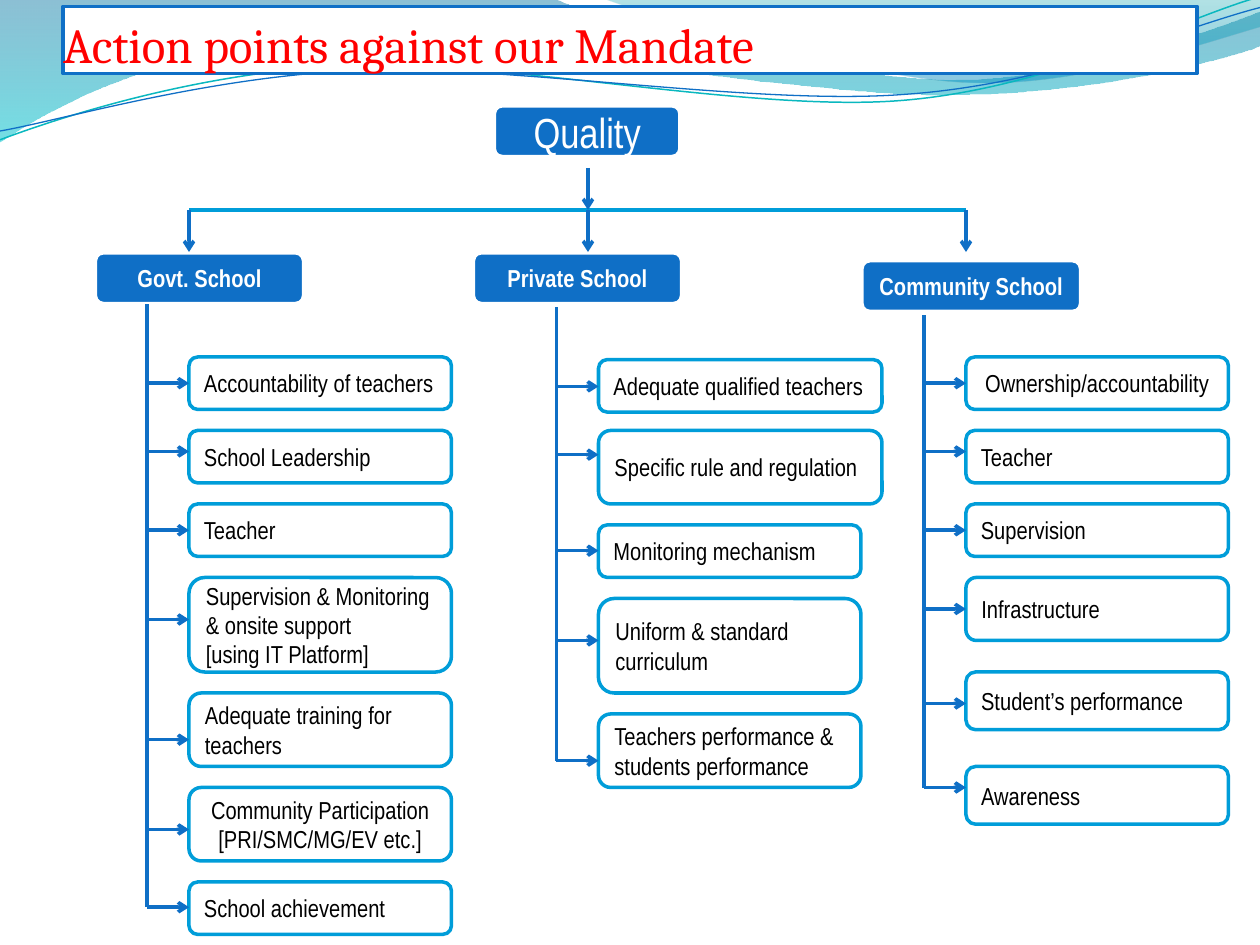
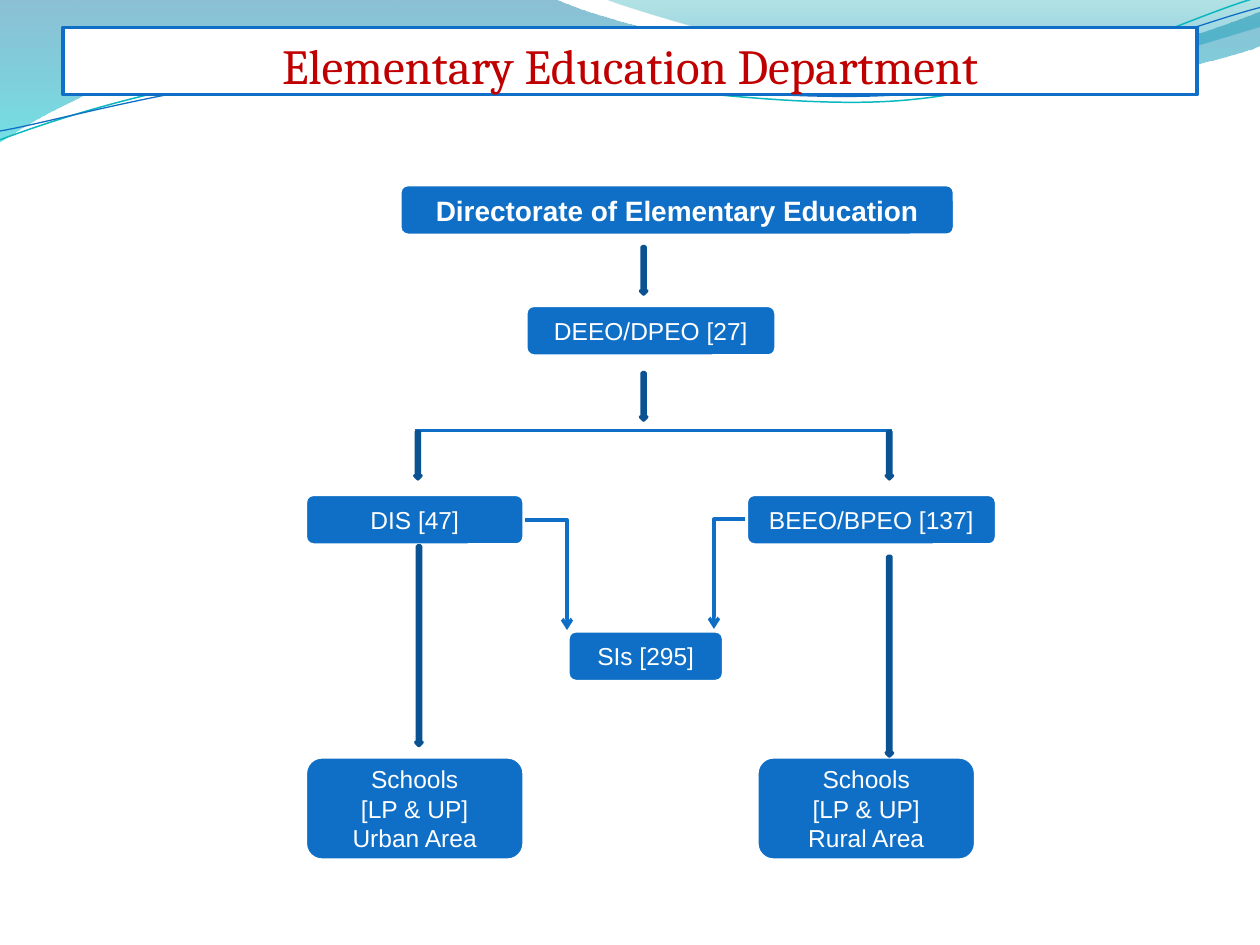
"""Build two school-education charts on a shared wave background."""
from dataclasses import dataclass
from typing import Any

from lxml import etree
from pptx import Presentation
from pptx.dml.color import RGBColor
from pptx.enum.shapes import MSO_CONNECTOR, MSO_SHAPE
from pptx.enum.text import MSO_ANCHOR, MSO_AUTO_SIZE, PP_ALIGN
from pptx.oxml.ns import qn
from pptx.util import Inches, Pt

STRAIGHT, ELBOW = MSO_CONNECTOR.STRAIGHT, MSO_CONNECTOR.ELBOW
ROUNDED, DOWN = MSO_SHAPE.ROUNDED_RECTANGLE, MSO_SHAPE.DOWN_ARROW
MIDDLE, BOTTOM = MSO_ANCHOR.MIDDLE, MSO_ANCHOR.BOTTOM
LEFT, CENTER = PP_ALIGN.LEFT, PP_ALIGN.CENTER
NO_FIT = MSO_AUTO_SIZE.NONE

WIDTH, HEIGHT = Inches(10), Inches(7.5)
COLUMN, ROW = WIDTH / 120, HEIGHT / 90
TENTH = WIDTH / 10
TITLE_ONLY = 5
FIRST_WAVE_ID = 101
SPINE_GAP = 4
TRUNK_ROW = 20
STEM_WIDTH = 0.6

COLORS = {
    "white": "FFFFFF", "black": "000000", "blue": "0F6FC6", "sky": "009DD9",
    "navy": "0B5292", "red": "FF0000", "crimson": "C00000", "teal": "0AB8BF",
    "sea": "0074A1", "aqua": "00C6CF", "lagoon": "00A1A9", "azure": "008BBF",
}
BOX_FRAME = {"word_wrap": True, "vertical_anchor": MIDDLE}
TITLE_FRAME = {
    "word_wrap": True, "auto_size": NO_FIT, "vertical_anchor": BOTTOM,
    "margin_left": 0, "margin_right": 0, "margin_bottom": 0,
    "margin_top": Inches(0.05),
}


@dataclass(frozen=True)
class Wave:
    """A background curve in tenths of the slide width."""
    start: tuple[float, float]
    segments: tuple[tuple[float, ...], ...]
    stops: tuple[tuple[float, str, int], ...] = ()
    line: tuple[str, float] = ("", 0)


@dataclass(frozen=True)
class Look:
    """Colours and type of a box."""
    fill: str
    edge: str
    edge_width: float
    ink: str
    font: str
    size: float = 14
    bold: bool = False
    align: PP_ALIGN = CENTER


@dataclass(frozen=True)
class Action:
    """An action point hanging from a school type."""
    row: float
    rows: float
    arrow_row: float
    text: str
    columns: float = 25
    align: PP_ALIGN = LEFT


@dataclass(frozen=True)
class School:
    """A school type with its action points."""
    name: str
    column: float
    row: float
    columns: float
    spine_row: float
    action_column: float
    actions: tuple[Action, ...]


WAVES = (
    Wave((0, 0), (
        (4.4, -0.01), (4.76, 0.17, 6.64, 0.63, 7.58, 0.63),
        (8.53, 0.63, 9.58, 0.26, 10, 0.09), (10.01, 0.36),
        (9.83, 0.44, 8.7, 0.76, 7.46, 0.75), (6.22, 0.75, 3.82, 0.28, 2.57, 0.34),
        (1.29, 0.36, 0.46, 0.83, -0.01, 1.13),
    ), stops=((0, "sea", 45), (1, "aqua", 55))),
    Wave((4.79, -0.01), (
        (5.09, 0.11, 6.82, 0.62, 7.69, 0.65), (8.56, 0.69, 9.61, 0.32, 10, 0.21),
        (10, 0),
    ), stops=((0, "lagoon", 30), (0.8, "azure", 45))),
    Wave((0, 1.11), (
        (0.48, 0.93, 1.58, 0.57, 2.77, 0.52), (3.95, 0.47, 5.93, 0.89, 7.13, 0.8),
        (8.33, 0.71, 9.38, 0.15, 9.98, -0.02),
    ), line=("teal", 0.85)),
    Wave((0, 1.04), (
        (0.47, 0.96, 1.64, 0.61, 2.83, 0.56), (4.03, 0.51, 5.97, 0.84, 7.17, 0.75),
        (8.36, 0.67, 9.41, 0.21, 10, 0.06),
    ), line=("blue", 0.75)),
)

QUALITY = Look("blue", "white", 3, "white", "Arial Narrow", size=24)
SCHOOL = Look("blue", "white", 3, "white", "Arial Narrow", bold=True)
ACTION = {align: Look("white", "sky", 2, "black", "Arial Narrow", align=align)
          for align in (LEFT, CENTER)}
DIRECTORATE = Look("blue", "white", 3, "white", "Arial", size=16, bold=True)
OFFICE = Look("blue", "white", 3, "white", "Arial")

SCHOOLS = (
    School("Govt. School", 9, 24, 20, 29, 18, (
        Action(34, 5, 36.5, "Accountability of teachers"),
        Action(41, 5, 43, "School Leadership"),
        Action(48, 5, 50.5, "Teacher"),
        Action(55, 9, 59, "Supervision & Monitoring & onsite support\n[using IT Platform]"),
        Action(66, 7, 70.45, "Adequate training for teachers"),
        Action(75, 7, 79, "Community Participation [PRI/SMC/MG/EV etc.]", align=CENTER),
        Action(84, 5, 86.4, "School achievement"),
    )),
    School("Private School", 45, 24, 20, 29.25, 57, (
        Action(34.25, 5, 36.8, "Adequate qualified teachers", 27),
        Action(41, 7, 43.3, "Specific rule and regulation", 27),
        Action(50, 5, 52.45, "Monitoring mechanism"),
        Action(57, 9, 61, "Uniform & standard curriculum"),
        Action(68, 7, 72.45, "Teachers performance & students performance"),
    )),
    School("Community School", 82, 24.75, 21, 30, 92, (
        Action(34, 5, 36.5, "Ownership/accountability", align=CENTER),
        Action(41, 5, 43, "Teacher"),
        Action(48, 5, 50.5, "Supervision"),
        Action(55, 6, 58, "Infrastructure"),
        Action(64, 5.5, 67, "Student’s performance"),
        Action(73, 5.5, 75, "Awareness"),
    )),
)
OFFICES = (
    (38, 17.5, 53, 5, "Directorate of Elementary Education", DIRECTORATE),
    (50, 29, 24, 5, "DEEO/DPEO [27]", OFFICE),
    (29, 47, 21, 5, "DIS [47]", OFFICE),
    (71, 47, 24, 5, "BEEO/BPEO [137]", OFFICE),
    (29, 72, 21, 10, "Schools\n[LP & UP]\nUrban Area", OFFICE),
    (54, 60, 15, 5, "SIs [295]", OFFICE),
    (72, 72, 21, 10, "Schools\n[LP & UP]\nRural Area", OFFICE),
)
STEMS = ((61, 23.5, 4.5), (61, 35.5, 4.5), (39.5, 41.1, 4.5),
         (84.4, 41.1, 4.5), (39.6, 52, 19), (84.4, 53, 19))
INSPECTOR_LINKS = ((50, 49.5, 54, 60), (71, 49.45, 68, 59.9))


def rgb(color: str) -> RGBColor:
    """Look up a named colour."""
    return RGBColor.from_string(COLORS[color])


def assign(target: Any, values: dict[str, Any]) -> None:
    """Set each named value on the target."""
    for name, value in values.items():
        setattr(target, name, value)


def grid(column: float, row: float, columns: float, rows: float) -> dict[str, int]:
    """Turn grid cells into a position and size."""
    return {"left": round(column * COLUMN), "top": round(row * ROW),
            "width": round(columns * COLUMN), "height": round(rows * ROW)}


def stroke(shape: Any, color: str, width: float) -> None:
    """Give a shape or connector its line."""
    shape.line.color.rgb = rgb(color)
    shape.line.width = Pt(width)


def paint(shape: Any, fill: str, edge: str, width: float) -> None:
    """Give a shape a flat fill and line."""
    shape.fill.solid()
    shape.fill.fore_color.rgb = rgb(fill)
    stroke(shape, edge, width)


def write(shape: Any, text: str, frame: dict[str, Any], look: Look) -> None:
    """Put formatted text into a shape."""
    shape.text_frame.text = text
    assign(shape.text_frame, frame)
    for paragraph in shape.text_frame.paragraphs:
        paragraph.alignment = look.align
        assign(paragraph.font, {"name": look.font, "size": Pt(look.size), "bold": look.bold})
        paragraph.font.color.rgb = rgb(look.ink)


def bend(outline: Any, wave: Wave) -> None:
    """Turn each run of three control points into one Bézier segment."""
    vertices = iter(outline.findall(qn("a:lnTo")))
    for segment in wave.segments:
        controls = [next(vertices) for _ in range(len(segment) // 2)]
        if len(controls) == 1:
            continue
        curve = etree.Element(qn("a:cubicBezTo"))
        controls[0].addprevious(curve)
        for control in controls:
            curve.append(control[0])
            outline.remove(control)


def draw_wave(slide: Any, wave: Wave) -> Any:
    """Draw one background wave."""
    x, y = wave.start
    builder = slide.shapes.build_freeform(x * TENTH, y * TENTH)
    points = [(s[i] * TENTH, s[i + 1] * TENTH)
              for s in wave.segments for i in range(0, len(s), 2)]
    builder.add_line_segments(points, close=bool(wave.stops))
    shape = builder.convert_to_shape()
    bend(next(shape._element.iter(qn("a:path"))), wave)
    shape.shadow.inherit = False
    if not wave.stops:
        shape.fill.background()
        stroke(shape, *wave.line)
        return shape
    shape.line.fill.background()
    shape.fill.gradient()
    shape.fill.gradient_angle = 270
    for stop, (position, color, _) in zip(shape.fill.gradient_stops, wave.stops):
        stop.position = position
        stop.color.rgb = rgb(color)
    tints = shape._element.spPr.iter(qn("a:srgbClr"))
    for tint, (_, _, opacity) in zip(tints, wave.stops):
        etree.SubElement(tint, qn("a:alpha"), val=str(opacity * 1000))
    return shape


def share_waves(slide: Any) -> None:
    """Draw the waves once and hand them to the slide's layout."""
    anchor = slide.slide_layout.shapes[0]._element
    for number, wave in enumerate(WAVES, FIRST_WAVE_ID):
        element = draw_wave(slide, wave)._element
        next(element.iter(qn("p:cNvPr"))).set("id", str(number))
        anchor.addprevious(element)


def add_page(deck: Any, title: str, row: float, ink: str, align: PP_ALIGN) -> Any:
    """Add a slide with a framed title."""
    slide = deck.slides.add_slide(deck.slide_layouts[TITLE_ONLY])
    heading = slide.shapes.title
    assign(heading, grid(6, row, 108, 6.4))
    paint(heading, "white", "blue", 2)
    write(heading, title, TITLE_FRAME,
          Look("white", "blue", 2, ink, "Cambria", size=28, align=align))
    return slide


def add_box(slide: Any, column: float, row: float, columns: float, rows: float,
            text: str, look: Look) -> None:
    """Draw a rounded box with text."""
    box = slide.shapes.add_shape(ROUNDED, **grid(column, row, columns, rows))
    box.shadow.inherit = False
    paint(box, look.fill, look.edge, look.edge_width)
    write(box, text, BOX_FRAME, look)


def add_link(slide: Any, x1: float, y1: float, x2: float, y2: float,
             arrow: bool = True, color: str = "blue", bent: bool = False) -> None:
    """Connect two grid points."""
    link = slide.shapes.add_connector(
        ELBOW if bent else STRAIGHT, round(x1 * COLUMN), round(y1 * ROW),
        round(x2 * COLUMN), round(y2 * ROW))
    stroke(link, color, 2)
    properties = link._element.spPr
    if bent:
        properties.find(qn("a:prstGeom")).set("prst", "bentConnector2")
    if arrow:
        etree.SubElement(properties.find(qn("a:ln")), qn("a:tailEnd"), type="arrow")
    etree.SubElement(properties, qn("a:effectLst"))


def add_school(slide: Any, school: School) -> None:
    """Draw a school type, its spine and its action points."""
    add_box(slide, school.column, school.row, school.columns, 5, school.name, SCHOOL)
    spine = school.action_column - SPINE_GAP
    add_link(slide, spine, school.spine_row, spine, school.actions[-1].arrow_row, arrow=False)
    for action in school.actions:
        add_box(slide, school.action_column, action.row, action.columns, action.rows,
                action.text, ACTION[action.align])
        add_link(slide, spine, action.arrow_row, school.action_column, action.arrow_row)


def build_mandate(deck: Any) -> None:
    """Build the slide of action points by school type."""
    slide = add_page(deck, "Action points against our Mandate", 0.6, "red", LEFT)
    share_waves(slide)
    add_box(slide, 47, 10, 17.85, 5, "Quality", QUALITY)
    for school in SCHOOLS:
        add_school(slide, school)
    add_link(slide, 18, TRUNK_ROW, 92, TRUNK_ROW, arrow=False, color="sky")
    for column in (18, 56, 92):
        add_link(slide, column, TRUNK_ROW, column, TRUNK_ROW + 4)
    add_link(slide, 56, TRUNK_ROW - 4, 56, TRUNK_ROW)


def build_department(deck: Any) -> None:
    """Build the slide of the department's offices."""
    slide = add_page(deck, "Elementary Education Department", 2.6, "crimson", CENTER)
    for office in OFFICES:
        add_box(slide, *office)
    add_link(slide, 39.5, 41, 85, 41, arrow=False)
    for column, row, rows in STEMS:
        stem = slide.shapes.add_shape(DOWN, **grid(column, row, STEM_WIDTH, rows))
        stem.shadow.inherit = False
        paint(stem, "blue", "navy", 2)
    for link in INSPECTOR_LINKS:
        add_link(slide, *link, bent=True)


def main() -> None:
    """Build and save the deck."""
    deck = Presentation()
    assign(deck, {"slide_width": WIDTH, "slide_height": HEIGHT})
    build_mandate(deck)
    build_department(deck)
    deck.save("out.pptx")


if __name__ == "__main__":
    main()
